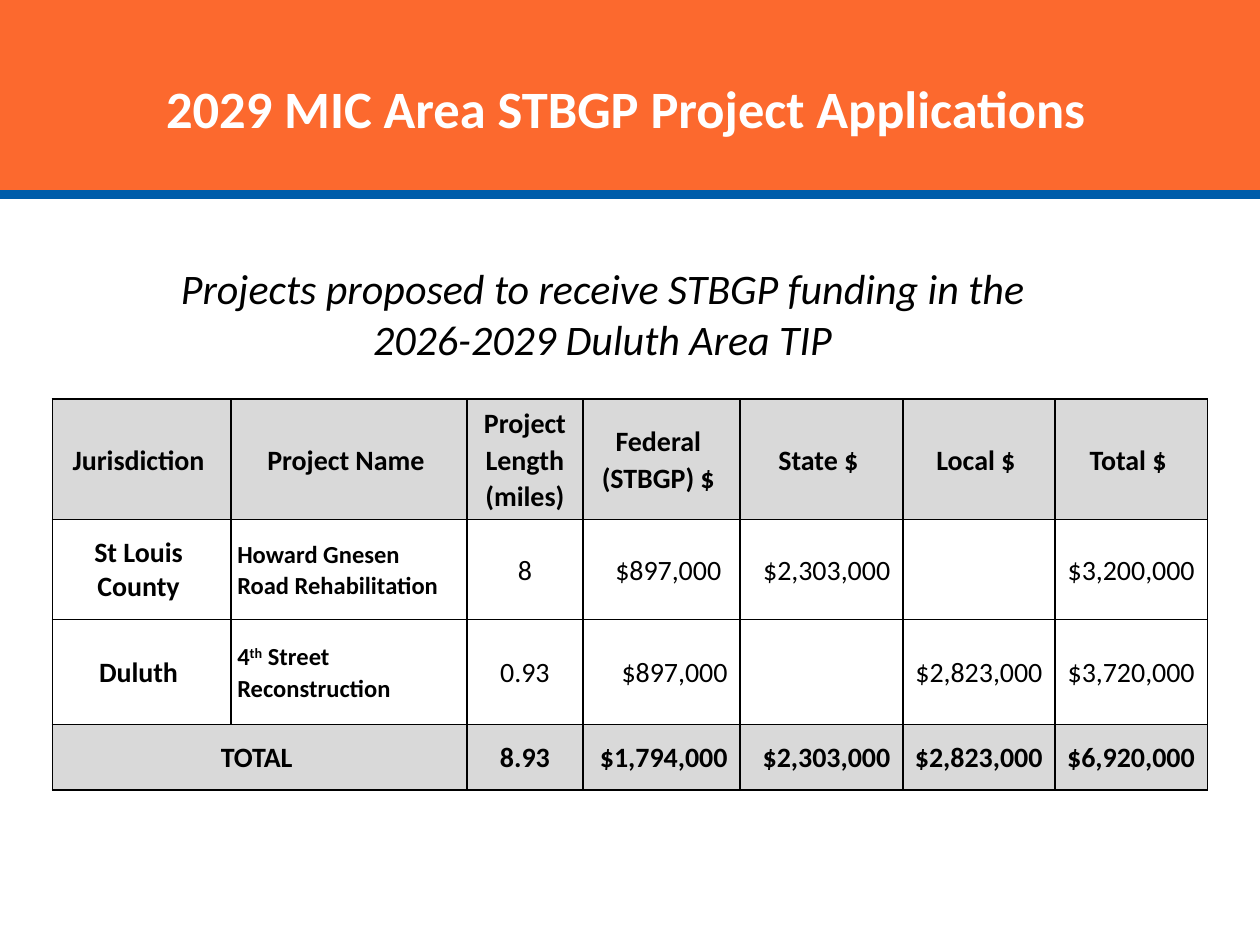
from dataclasses import dataclass

from lxml.etree import SubElement
from pptx import Presentation
from pptx.dml.color import RGBColor
from pptx.enum.shapes import MSO_SHAPE
from pptx.enum.text import MSO_ANCHOR, MSO_AUTO_SIZE, PP_ALIGN
from pptx.oxml.ns import qn
from pptx.util import Pt

FONT = "Calibri"
ORANGE, BLUE, GREY, WHITE, BLACK = "FC692E", "005DAA", "D9D9D9", "FFFFFF", "000000"
LEFT, CENTER, RIGHT = PP_ALIGN.LEFT, PP_ALIGN.CENTER, PP_ALIGN.RIGHT


@dataclass
class Band:
    top: float
    height: float
    color: str


@dataclass
class Column:
    header: str
    width: float
    align: PP_ALIGN
    margins: tuple = (3.6, 7.2)
    size: float = 16
    bold: bool = False


BANDS = [Band(0, 108.7, ORANGE), Band(108.7, 5, BLUE)]
COLUMNS = [
    Column("Jurisdiction", 102, CENTER, bold=True),
    Column("Project Name", 135, LEFT, size=14, bold=True),
    Column("Project Length\n(miles)", 66, CENTER, margins=(0.7, 0.7)),
    Column("Federal (STBGP) $", 90, RIGHT),
    Column("State $", 93, RIGHT),
    Column("Local $", 87, RIGHT),
    Column("Total $", 87, RIGHT),
]
PROJECTS = [
    ["St Louis County", "Howard Gnesen Road Rehabilitation", "8",
     "$897,000 ", "$2,303,000", "", "$3,200,000"],
    ["Duluth", "4^th^ Street Reconstruction", "0.93",
     "$897,000", "", "$2,823,000", "$3,720,000"],
]
TOTALS = ["TOTAL", "", "8.93", "$1,794,000", "$2,303,000", "$2,823,000", "$6,920,000"]
ROW_HEIGHTS = [69, 57, 60, 37.5]
THICK_EDGE = 2  # the column whose right border is heavier


def rgb(color: str) -> RGBColor:
    return RGBColor.from_string(color)


def write(tf, text: str, *, size: float, color: str = BLACK, bold: bool = False,
          italic: bool = False, align: PP_ALIGN = CENTER, spacing: float = 1.0) -> None:
    """Fill the first paragraph; newlines break lines, ^marks^ enclose superscript."""
    p = tf.paragraphs[0]
    p.alignment, p.line_spacing = align, spacing
    p.space_before = p.space_after = Pt(0)
    for i, line in enumerate(text.split("\n")):
        if i:
            p.add_line_break()
        for j, part in enumerate(line.split("^")):
            r = p.add_run()
            r.text = part
            f = r.font
            f.name, f.size, f.bold, f.italic = FONT, Pt(size), bold, italic
            f.color.rgb = rgb(color)
            if j % 2:
                r._r.get_or_add_rPr().set("baseline", "30000")


def add_band(s, band: Band, layer: int) -> None:
    sp = s.shapes.add_shape(MSO_SHAPE.RECTANGLE, 0, Pt(band.top), Pt(720), Pt(band.height))
    sp.shadow.inherit = False
    sp.fill.solid()
    sp.fill.fore_color.rgb = rgb(band.color)
    sp.line.fill.background()
    s.shapes._spTree.insert(2 + layer, sp._element)  # behind the placeholders


def place(sp, left: float, top: float, width: float, height: float,
          margins: tuple = (0, 0, 0, 0)):
    """Move a placeholder, set its margins and return its text frame."""
    sp.left, sp.top, sp.width, sp.height = Pt(left), Pt(top), Pt(width), Pt(height)
    tf = sp.text_frame
    tf.word_wrap, tf.auto_size = True, MSO_AUTO_SIZE.NONE
    tf.vertical_anchor = MSO_ANCHOR.MIDDLE
    tf.margin_left, tf.margin_top, tf.margin_right, tf.margin_bottom = map(Pt, margins)
    return tf


def remove_bullet(p) -> None:
    pPr = p._p.get_or_add_pPr()
    pPr.set("marL", "0")
    pPr.set("indent", "0")
    SubElement(pPr, qn("a:buNone"))


def set_borders(cell, **widths: float) -> None:
    """Draw the cell borders, given as L, R, T and B in points."""
    tcPr = cell._tc.get_or_add_tcPr()
    for side, width in widths.items():
        ln = SubElement(tcPr, qn(f"a:ln{side}"), w=str(Pt(width)))
        SubElement(SubElement(ln, qn("a:solidFill")), qn("a:srgbClr"), val=BLACK)


def add_project_table(s, left: float, top: float) -> None:
    rows = [[c.header for c in COLUMNS], *PROJECTS, TOTALS]
    last = len(rows) - 1
    width = sum(c.width for c in COLUMNS)
    table = s.shapes.add_table(len(rows), len(COLUMNS), Pt(left), Pt(top),
                               Pt(width), Pt(sum(ROW_HEIGHTS))).table
    table.first_row = table.horz_banding = False
    for i, col in enumerate(COLUMNS):
        table.columns[i].width = Pt(col.width)
    for i, height in enumerate(ROW_HEIGHTS):
        table.rows[i].height = Pt(height)
    table.cell(last, 0).merge(table.cell(last, 1))

    for i, values in enumerate(rows):
        shaded = i in (0, last)
        for j, (col, value) in enumerate(zip(COLUMNS, values)):
            cell = table.cell(i, j)
            cell.vertical_anchor = MSO_ANCHOR.MIDDLE
            cell.margin_left, cell.margin_right = map(Pt, col.margins)
            cell.margin_top = cell.margin_bottom = 0
            set_borders(cell, L=1.5 if j == THICK_EDGE + 1 else 1,
                        R=1.5 if j == THICK_EDGE else 1, T=1, B=1)
            if shaded:
                cell.fill.solid()
                cell.fill.fore_color.rgb = rgb(GREY)
            else:
                cell.fill.background()
            if value:
                write(cell.text_frame, value, size=16 if shaded else col.size,
                      bold=shaded or col.bold, align=CENTER if i == 0 else col.align,
                      spacing=1.0 if value == "St Louis County" else 1.07)


def main() -> None:
    prs = Presentation()
    prs.slide_width, prs.slide_height = Pt(720), Pt(540)
    s = prs.slides.add_slide(prs.slide_layouts[1])
    for layer, band in enumerate(BANDS):
        add_band(s, band, layer)

    title = place(s.shapes.title, -4, 12, 720, 99, margins=(7.2, 3.6, 3.6, 3.6))
    write(title, "2029 MIC Area STBGP Project Applications",
          size=30, color=WHITE, bold=True)

    body = place(s.placeholders[1], 14.4, 149, 660, 60)
    write(body, "Projects proposed to receive STBGP funding in the\n2026-2029 Duluth Area TIP",
          size=24, italic=True)
    remove_bullet(body.paragraphs[0])

    add_project_table(s, 30, 228)
    prs.save("out.pptx")


if __name__ == "__main__":
    main()
